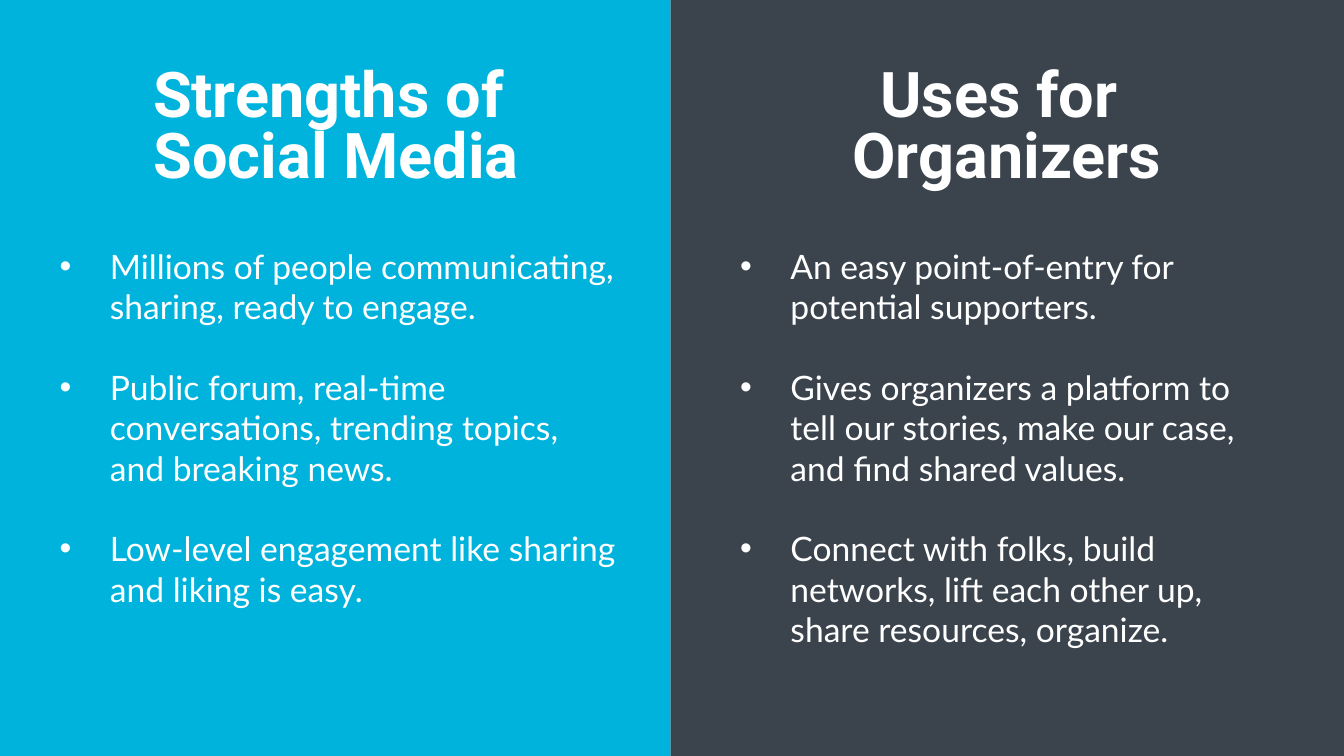
from lxml import etree
from pptx import Presentation
from pptx.dml.color import RGBColor
from pptx.enum.shapes import MSO_SHAPE
from pptx.enum.text import MSO_AUTO_SIZE as AUTO, PP_ALIGN as ALIGN
from pptx.oxml.ns import qn
from pptx.util import Inches, Pt

WIDTH, HEIGHT = 13.33, 7.5
SPLIT = 6.65
BLEED = 0.05
TITLE_TOP, TITLE_HEIGHT = 0.65, 1.3
LIST_TOP = 2.42
INDENT = 0.5

CYAN = RGBColor(0x00, 0xB3, 0xDC)
SLATE = RGBColor(0x3B, 0x44, 0x4D)
WHITE = RGBColor(0xFF, 0xFF, 0xFF)

STRENGTHS = [
    "Millions of people communicating, sharing, ready to engage.",
    "Public forum, real-time conversations, trending topics, and breaking news.",
    "Low-level engagement like sharing and liking is easy.",
]
USES = [
    "An easy point-of-entry for potential supporters.",
    "Gives organizers a platform to tell our stories, make our case, "
    "and find shared values.",
    "Connect with folks, build networks, lift each other up, "
    "share resources, organize.",
]


def add_panel(s, left, width, color):
    sp = s.shapes.add_shape(
        MSO_SHAPE.RECTANGLE, Inches(left), Inches(-BLEED),
        Inches(width), Inches(HEIGHT + BLEED))
    sp.shadow.inherit = False
    sp.fill.solid()
    sp.fill.fore_color.rgb = color
    sp.line.fill.background()


def set_bullet(p):
    pPr = p._p.get_or_add_pPr()
    pPr.set("marL", str(Inches(INDENT)))
    pPr.set("indent", str(-Inches(INDENT)))
    etree.SubElement(pPr, qn("a:buFont"), typeface="Arial")
    etree.SubElement(pPr, qn("a:buChar"), char="•")


def add_text(s, box, lines, *, font, size, bold=False, align=ALIGN.LEFT,
             spacing=1.0, gap=0, bullets=False, inset=(0.07, 0.04)):
    tf = s.shapes.add_textbox(*map(Inches, box)).text_frame
    tf.word_wrap = True
    tf.auto_size = AUTO.SHAPE_TO_FIT_TEXT
    tf.margin_left = tf.margin_right = Inches(inset[0])
    tf.margin_top = tf.margin_bottom = Inches(inset[1])
    for i, line in enumerate(lines):
        p = tf.add_paragraph() if i else tf.paragraphs[0]
        p.alignment = align
        p.line_spacing = spacing
        p.space_before = Pt(gap if i else 0)
        if bullets:
            set_bullet(p)
        r = p.add_run()
        r.text = line
        r.font.name = font
        r.font.size = Pt(size)
        r.font.bold = bold
        r.font.color.rgb = WHITE


def add_title(s, left, width, lines):
    add_text(s, (left, TITLE_TOP, width, TITLE_HEIGHT), lines, font="Roboto",
             size=45, bold=True, align=ALIGN.CENTER, spacing=0.8)


def add_list(s, left, width, height, items):
    add_text(s, (left, LIST_TOP, width, height), items, font="Lato", size=24,
             gap=28.8, bullets=True, inset=(0.05, 0.02))


def main():
    prs = Presentation()
    prs.slide_width, prs.slide_height = Inches(WIDTH), Inches(HEIGHT)
    s = prs.slides.add_slide(prs.slide_layouts[6])

    add_panel(s, SPLIT, WIDTH - SPLIT, SLATE)
    add_panel(s, 0, SPLIT, CYAN)
    add_title(s, 6.67, 6.63, ["Uses for ", "Organizers"])
    add_list(s, 7.29, 5.41, 4.09, USES)
    add_list(s, 0.54, 5.65, 3.68, STRENGTHS)
    add_title(s, 0, 6.67, ["Strengths of ", "Social Media"])

    prs.save("out.pptx")


if __name__ == "__main__":
    main()
